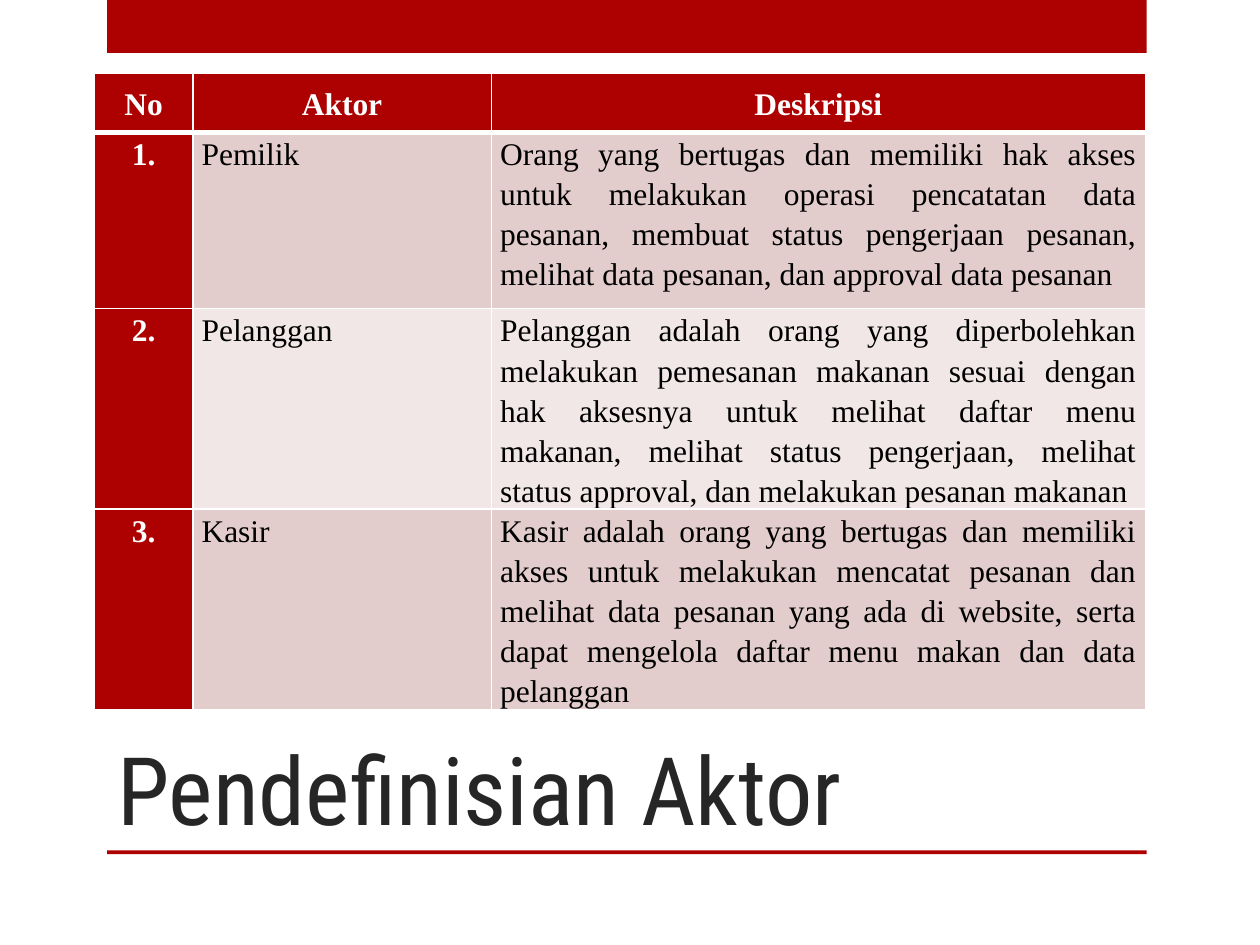
from lxml.etree import SubElement
from pptx import Presentation
from pptx.dml.color import RGBColor
from pptx.enum.shapes import MSO_SHAPE
from pptx.enum.text import MSO_ANCHOR, MSO_AUTO_SIZE, PP_ALIGN
from pptx.oxml.ns import qn
from pptx.util import Inches, Pt

RED, WHITE, BLACK, DARK = "AD0101", "FFFFFF", "000000", "262626"
BANDS = ("E3CCCC", "F1E7E7")
COL_WIDTHS = (0.78, 2.37, 5.19)
HEADER_HEIGHT, ROW_HEIGHT = 0.47, 1.4
ROWS = [
    ("No", "Aktor", "Deskripsi"),
    ("1.", "Pemilik",
     "Orang yang bertugas dan memiliki hak akses untuk melakukan operasi "
     "pencatatan data pesanan, membuat status pengerjaan pesanan, melihat "
     "data pesanan, dan approval data pesanan"),
    ("2.", "Pelanggan",
     "Pelanggan adalah orang yang diperbolehkan melakukan pemesanan makanan "
     "sesuai dengan hak aksesnya untuk melihat daftar menu makanan, melihat "
     "status pengerjaan, melihat status approval, dan melakukan pesanan makanan"),
    ("3.", "Kasir",
     "Kasir adalah orang yang bertugas dan memiliki akses untuk melakukan "
     "mencatat pesanan dan melihat data pesanan yang ada di website, serta "
     "dapat mengelola daftar menu makan dan data pelanggan"),
]


def color(value):
    return RGBColor.from_string(value)


def format_run(r, font, size, value, bold=False):
    r.font.name = font
    r.font.size = Pt(size)
    r.font.bold = bold
    r.font.color.rgb = color(value)


def add_bar(s, top, height):
    sp = s.shapes.add_shape(MSO_SHAPE.RECTANGLE, Inches(0.85), Inches(top),
                            Inches(8.25), Inches(height))
    sp.shadow.inherit = False
    sp.fill.solid()
    sp.fill.fore_color.rgb = color(RED)
    sp.line.fill.background()


def set_title(s, text):
    sp = s.shapes.title
    sp.left, sp.top, sp.width, sp.height = map(Inches, (0.83, 5, 7.42, 1.75))
    tf = sp.text_frame
    tf.text = text
    tf.word_wrap = True
    tf.auto_size = MSO_AUTO_SIZE.NONE
    tf.vertical_anchor = MSO_ANCHOR.BOTTOM
    p = tf.paragraphs[0]
    p.alignment = PP_ALIGN.LEFT
    format_run(p.runs[0], "Roboto Condensed", 54, DARK)


def set_borders(cell, row):
    widths = {"L": 1, "R": 1, "T": 3 if row == 1 else 1, "B": 3 if row == 0 else 1}
    for side, width in widths.items():
        ln = SubElement(cell._tc.get_or_add_tcPr(), qn(f"a:ln{side}"), w=str(Pt(width)))
        SubElement(SubElement(ln, qn("a:solidFill")), qn("a:srgbClr"), val=WHITE)


def fill_cell(cell, text, row, col):
    strong = row == 0 or col == 0
    set_borders(cell, row)
    cell.fill.solid()
    cell.fill.fore_color.rgb = color(RED if strong else BANDS[(row - 1) % 2])
    cell.margin_left = cell.margin_right = Inches(0.07)
    cell.margin_top = cell.margin_bottom = 0
    cell.vertical_anchor = MSO_ANCHOR.MIDDLE if row == 0 else MSO_ANCHOR.TOP
    p = cell.text_frame.paragraphs[0]
    p.text = text
    p.alignment = PP_ALIGN.CENTER if strong else PP_ALIGN.JUSTIFY
    p.line_spacing = 1.15
    p.space_after = Pt(10)
    format_run(p.runs[0], "Times New Roman", 18, WHITE if strong else BLACK, strong)


def add_actor_table(s):
    heights = [HEADER_HEIGHT] + [ROW_HEIGHT] * (len(ROWS) - 1)
    table = s.shapes.add_table(len(ROWS), len(COL_WIDTHS), Inches(0.75), Inches(0.58),
                               Inches(sum(COL_WIDTHS)), Inches(sum(heights))).table
    for column, width in zip(table.columns, COL_WIDTHS):
        column.width = Inches(width)
    for i, (height, texts) in enumerate(zip(heights, ROWS)):
        table.rows[i].height = Inches(height)
        for j, text in enumerate(texts):
            fill_cell(table.cell(i, j), text, i, j)


def main():
    prs = Presentation()
    prs.slide_width, prs.slide_height = Inches(10), Inches(7.5)
    s = prs.slides.add_slide(prs.slide_layouts[5])
    add_bar(s, 0, 0.42)
    add_bar(s, 6.75, 0.03)
    set_title(s, "Pendefinisian Aktor")
    add_actor_table(s)
    prs.save("out.pptx")


if __name__ == "__main__":
    main()
